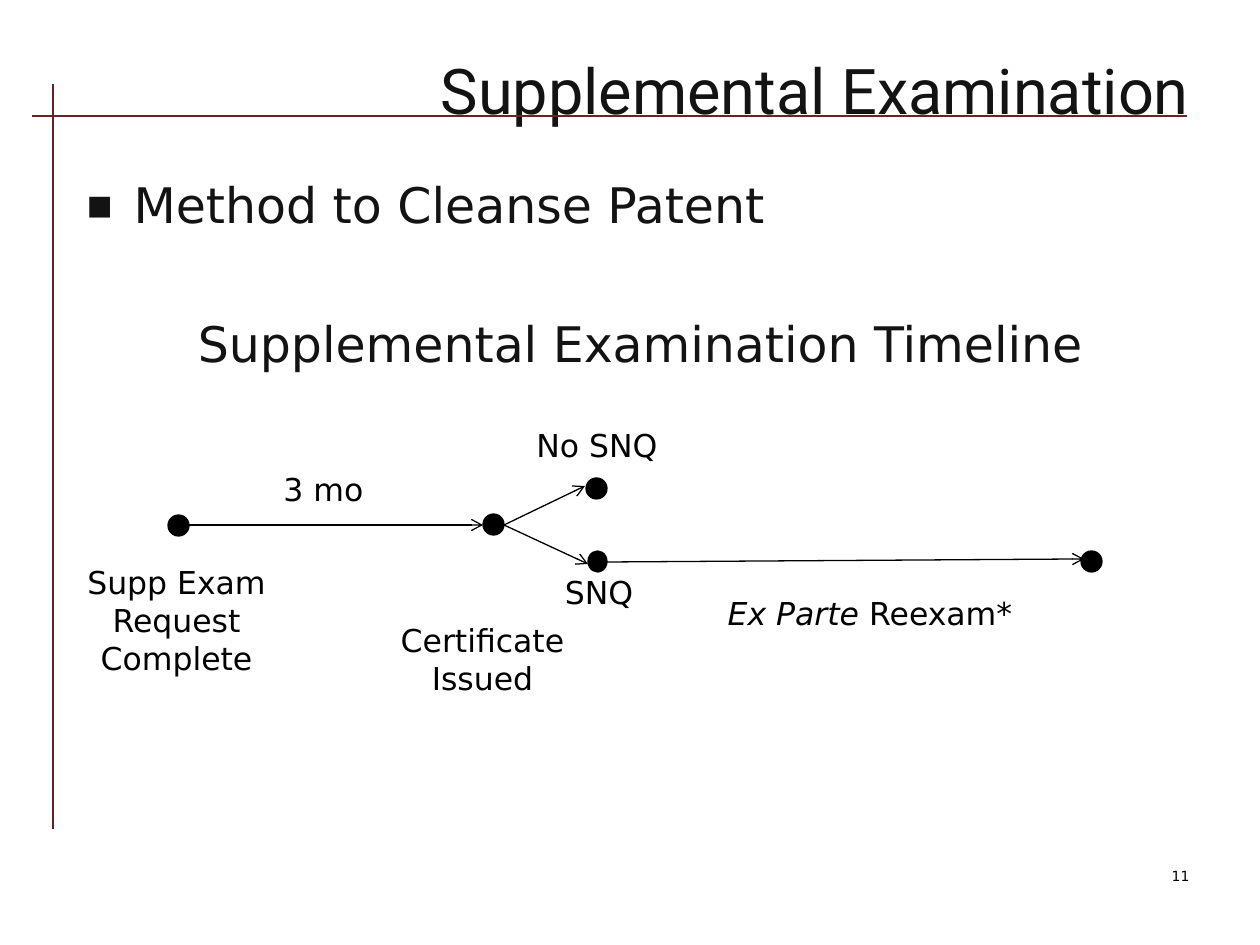
from lxml import etree
from pptx import Presentation
from pptx.dml.color import RGBColor
from pptx.enum.shapes import MSO_CONNECTOR, MSO_SHAPE
from pptx.enum.text import MSO_ANCHOR, MSO_AUTO_SIZE, PP_ALIGN
from pptx.oxml.ns import qn
from pptx.util import Emu, Pt

LEFT, CENTER, RIGHT = PP_ALIGN.LEFT, PP_ALIGN.CENTER, PP_ALIGN.RIGHT
MIDDLE, TOP = MSO_ANCHOR.MIDDLE, MSO_ANCHOR.TOP
STRAIGHT, OVAL = MSO_CONNECTOR.STRAIGHT, MSO_SHAPE.OVAL
NO_FIT, GROW = MSO_AUTO_SIZE.NONE, MSO_AUTO_SIZE.SHAPE_TO_FIT_TEXT

BLACK = RGBColor(0x00, 0x00, 0x00)
INK = RGBColor(0x12, 0x13, 0x12)
RULE_RED = RGBColor(0x6C, 0x20, 0x27)
MARGIN_RED = RGBColor(0x67, 0x1F, 0x26)

TITLE_FORMAT = {"name": "Roboto", "size": Pt(36)}
BODY_FORMAT = {"name": "DejaVu Sans", "size": Pt(28)}
LABEL_FORMAT = {"name": "DejaVu Sans", "size": Pt(18)}
NUMBER_FORMAT = {"name": "DejaVu Sans", "size": Pt(8)}

TITLE = "Supplemental Examination"
BULLET = "Method to Cleanse Patent"
HEADING = "Supplemental Examination Timeline"
PAGE_NUMBER = "11"

RULES = [
    ((1187, 116), (32, 116), RULE_RED),
    ((53, 84), (53, 829), MARGIN_RED),
]
DOTS = [
    (168, 515, 21, 21),
    (483, 514, 21, 21),
    (586, 478, 21, 21),
    (588, 551, 19, 21),
    (1081, 551, 21, 21),
]
ARROWS = [
    ((189, 525), (483, 525)),
    ((504, 525), (585, 486)),
    ((504, 525), (588, 564)),
    ((607, 562), (1084, 559)),
]
LABELS = [
    ((73, 557, 207, 127), CENTER, ["Supp Exam", "Request", "Complete"]),
    ((271, 464, 107, 50), LEFT, ["3 mo"]),
    ((388, 615, 189, 89), CENTER, ["Certificate", "Issued"]),
    ((551, 567, 96, 50), CENTER, ["SNQ"]),
    ((522, 420, 150, 50), CENTER, ["No SNQ"]),
    ((711, 588, 318, 50), CENTER, [[("Ex Parte ", True), ("Reexam*", False)]]),
]


def px(value):
    return Emu(round(value * 914400 / 126))


def place(shape, area):
    shape.left, shape.top, shape.width, shape.height = map(px, area)


def write(para, text, formats, color, align):
    para.alignment = align
    para.space_before = Pt(0)
    pieces = [(text, False)] if isinstance(text, str) else text
    for words, italic in pieces:
        span = para.add_run()
        span.text = words
        for name, value in formats.items():
            setattr(span.font, name, value)
        span.font.italic = italic
        span.font.color.rgb = color


def set_bullet(para, indent, char=None):
    props = para._p.get_or_add_pPr()
    props.set("marL", str(px(indent)))
    props.set("indent", str(-px(indent)))
    if char is None:
        etree.SubElement(props, qn("a:buNone"))
        return
    etree.SubElement(props, qn("a:buSzPct")).set("val", "85000")
    etree.SubElement(props, qn("a:buFont")).set("typeface", "DejaVu Sans")
    etree.SubElement(props, qn("a:buChar")).set("char", char)


def add_line(page, start, end, color, arrow=False):
    line = page.shapes.add_connector(STRAIGHT, *map(px, start + end))
    line.line.color.rgb = color
    line.line.width = Pt(0.75)
    if arrow:
        stroke = line.line._get_or_add_ln()
        etree.SubElement(stroke, qn("a:tailEnd")).set("type", "arrow")
    etree.SubElement(line._element.spPr, qn("a:effectLst"))


def add_dot(page, area):
    dot = page.shapes.add_shape(OVAL, *map(px, area))
    dot.shadow.inherit = False
    dot.fill.solid()
    dot.fill.fore_color.rgb = BLACK
    dot.line.color.rgb = BLACK
    dot.line.width = Pt(0.75)


def add_text(page, area, align, lines, formats, wrap=False):
    frame = page.shapes.add_textbox(*map(px, area)).text_frame
    frame.word_wrap = wrap
    frame.auto_size = NO_FIT if wrap else GROW
    for index, text in enumerate(lines):
        para = frame.add_paragraph() if index else frame.paragraphs[0]
        write(para, text, formats, BLACK, align)


def fill_placeholders(page):
    title, body = page.placeholders
    place(title, (68, 0, 1134, 179))
    place(body, (73, 168, 1134, 63))
    for box, anchor in ((title, MIDDLE), (body, TOP)):
        box.text_frame.auto_size = NO_FIT
        box.text_frame.vertical_anchor = anchor
    write(title.text_frame.paragraphs[0], TITLE, TITLE_FORMAT, INK, RIGHT)

    bullet = body.text_frame.paragraphs[0]
    write(bullet, BULLET, BODY_FORMAT, INK, LEFT)
    set_bullet(bullet, 48, "▪")
    heading = body.text_frame.add_paragraph()
    write(heading, HEADING, BODY_FORMAT, INK, CENTER)
    heading.space_before = Pt(46)
    set_bullet(heading, 0)


def main():
    deck = Presentation()
    deck.slide_width, deck.slide_height = px(1260), px(945)
    page = deck.slides.add_slide(deck.slide_layouts[1])
    for start, end, color in RULES:
        add_line(page, start, end, color)
    fill_placeholders(page)
    add_text(page, (908, 861, 294, 66), RIGHT, [PAGE_NUMBER], NUMBER_FORMAT, True)
    for area in DOTS:
        add_dot(page, area)
    for start, end in ARROWS:
        add_line(page, start, end, BLACK, arrow=True)
    for area, align, lines in LABELS:
        add_text(page, area, align, lines, LABEL_FORMAT)
    deck.save("out.pptx")


if __name__ == "__main__":
    main()
